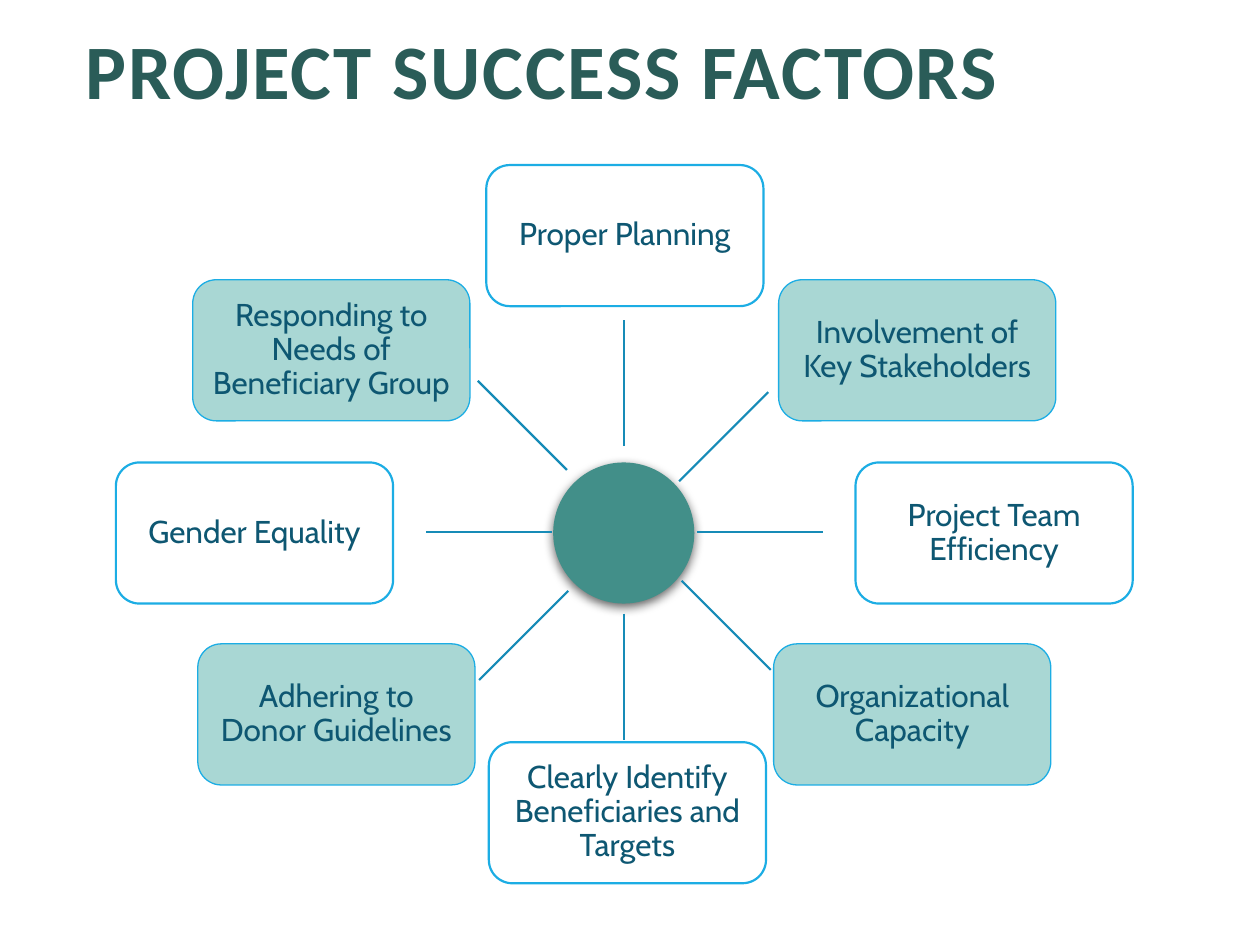
"""Build the slide of project success factors around a hub."""
from math import cos, radians, sin

from lxml.etree import SubElement
from pptx import Presentation
from pptx.dml.color import RGBColor
from pptx.enum.shapes import MSO_CONNECTOR, MSO_SHAPE
from pptx.enum.text import MSO_ANCHOR, MSO_AUTO_SIZE, PP_ALIGN
from pptx.oxml.ns import qn
from pptx.util import Inches, Pt

COLORS = {
    "title": "2A5C58",
    "text": "0E5772",
    "mint": "A9D7D4",
    "white": "FFFFFF",
    "edge": "1CADE4",
    "spoke": "168BB7",
    "hub": "428F89",
    "shade": "000000",
}
WIDE, HIGH = 2.2, 1.12
SPOKE = 1

BOXES = [
    ("Organizational Capacity", 6.14, 5.11, "mint"),
    ("Adhering to Donor Guidelines", 1.57, 5.11, "mint"),
    ("Project Team Efficiency", 6.79, 3.67, "white"),
    ("Gender Equality", 0.92, 3.67, "white"),
    ("Involvement of Key Stakeholders", 6.18, 2.22, "mint"),
    ("Responding to Needs of Beneficiary Group", 1.53, 2.22, "mint"),
    ("Proper Planning", 3.86, 1.31, "white"),
    ("Clearly Identify Beneficiaries and Targets", 3.88, 5.89, "white"),
]
EDGES = {"mint": 0.75, "white": 1.25}
STARTS = [
    (5.53, 4.22), (5.41, 4.61), (4.95, 4.87), (4.51, 4.69),
    (4.38, 4.22), (4.5, 3.73), (4.95, 3.54), (5.39, 3.82),
]


def color(name):
    return RGBColor.from_string(COLORS[name])


def put_text(shape, text, *, font, size, tint, align, space, inset=0.1,
             bold=False, track=0):
    frame = shape.text_frame
    frame.word_wrap = True
    frame.auto_size = MSO_AUTO_SIZE.NONE
    frame.vertical_anchor = MSO_ANCHOR.MIDDLE
    frame.margin_left = frame.margin_right = Inches(inset)
    frame.margin_top = frame.margin_bottom = Inches(min(inset, 0.07))
    para = frame.paragraphs[0]
    para.alignment = align
    para.line_spacing = space
    run = para.add_run()
    run.text = text
    run.font.name = font
    run.font.size = Pt(size)
    run.font.bold = bold
    run.font.color.rgb = color(tint)
    if track:
        run.font._element.set("spc", str(track * 100))


def add_title(slide, text):
    title = slide.shapes.title
    title.left, title.top = Inches(0.58), Inches(0.16)
    title.width, title.height = Inches(8.79), Inches(0.91)
    put_text(title, text, font="Calibri", size=44, tint="title",
             align=PP_ALIGN.LEFT, space=0.8, bold=True, track=1)


def add_box(slide, text, left, top, fill):
    box = slide.shapes.add_shape(MSO_SHAPE.ROUNDED_RECTANGLE, Inches(left),
                                 Inches(top), Inches(WIDE), Inches(HIGH))
    box.shadow.inherit = False
    box.fill.solid()
    box.fill.fore_color.rgb = color(fill)
    box.line.color.rgb = color("edge")
    box.line.width = Pt(EDGES[fill])
    put_text(box, text, font="Cabin", size=18, tint="text",
             align=PP_ALIGN.CENTER, space=0.9, inset=0.07)


def add_hub(slide):
    hub = slide.shapes.add_shape(MSO_SHAPE.OVAL, Inches(4.39), Inches(3.67),
                                 Inches(HIGH), Inches(HIGH))
    hub.fill.solid()
    hub.fill.fore_color.rgb = color("hub")
    hub.line.fill.background()
    glow = SubElement(hub._element.spPr, qn("a:effectLst"))
    cast = SubElement(glow, qn("a:outerShdw"), blurRad=str(Pt(6)),
                      dist=str(Pt(2)), dir="5400000", rotWithShape="0")
    shade = SubElement(cast, qn("a:srgbClr"), val=COLORS["shade"])
    SubElement(shade, qn("a:alpha"), val="60000")


def add_spoke(slide, x, y, angle):
    end_x = x + SPOKE * cos(radians(angle))
    end_y = y + SPOKE * sin(radians(angle))
    line = slide.shapes.add_connector(MSO_CONNECTOR.STRAIGHT, Inches(x),
                                      Inches(y), Inches(end_x), Inches(end_y))
    line.line.color.rgb = color("spoke")
    line.line.width = Pt(1.25)
    SubElement(line._element.spPr, qn("a:effectLst"))


def main():
    deck = Presentation()
    deck.slide_width, deck.slide_height = Inches(10), Inches(7.5)
    slide = deck.slides.add_slide(deck.slide_layouts[5])
    add_title(slide, "PROJECT SUCCESS FACTORS")
    add_hub(slide)
    for turn, (x, y) in enumerate(STARTS):
        add_spoke(slide, x, y, turn * 45)
    for box in BOXES:
        add_box(slide, *box)
    deck.save("out.pptx")


if __name__ == "__main__":
    main()
